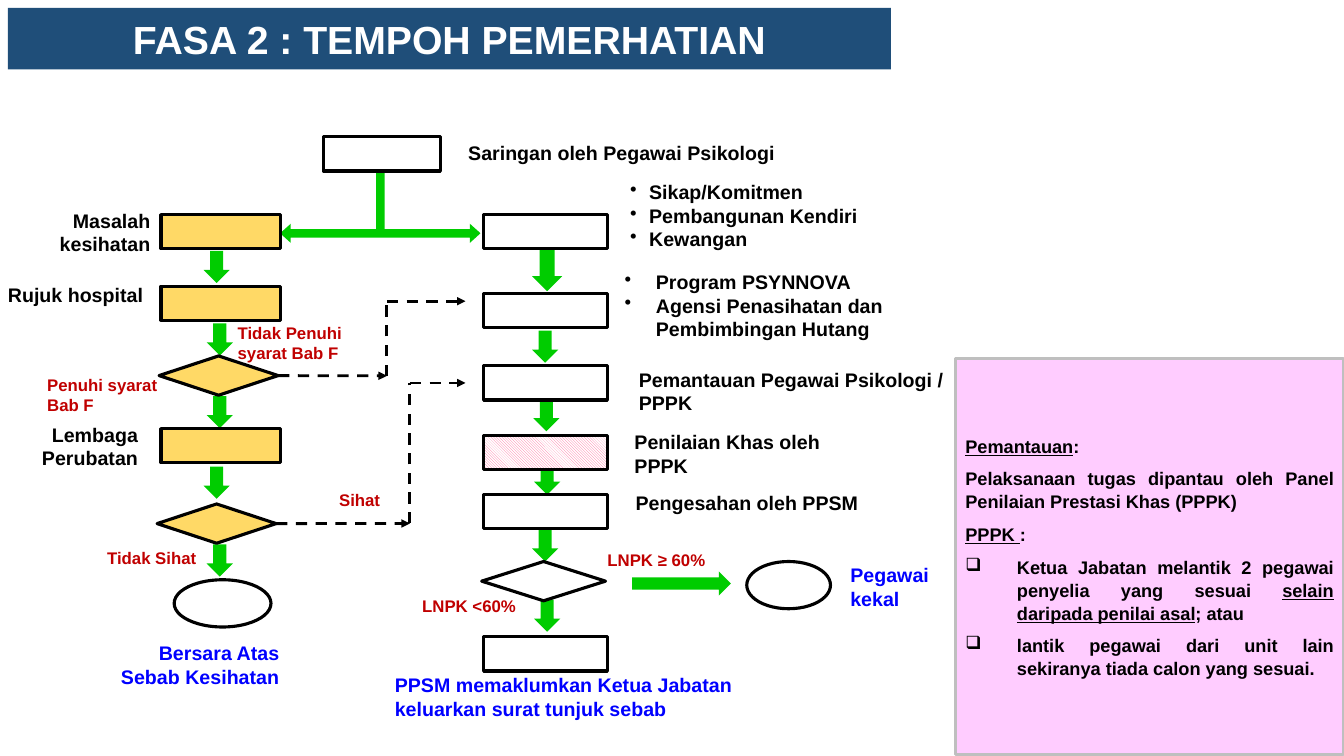
import lxml.etree
import pptx
import pptx.dml.color
import pptx.enum.dml
import pptx.enum.shapes
import pptx.enum.text
import pptx.oxml.ns
import pptx.util

Cm = pptx.util.Cm
Pt = pptx.util.Pt
SHAPE = pptx.enum.shapes.MSO_SHAPE
ALIGN = pptx.enum.text.PP_ALIGN
ANCHOR = pptx.enum.text.MSO_ANCHOR

BLACK, WHITE, BLUE, RED = "000000", "FFFFFF", "0000FF", "C00000"
GREEN, YELLOW = "00CC00", "FFD966"
BOX_HEIGHT = 0.86
HEALTH_WIDTH, REVIEW_WIDTH = 3.0, 3.12
DIAMOND_HEIGHT, OVAL_HEIGHT = 0.99, 1.19
ARROW_SIZE = (0.66, 0.81)

HEALTH_BOXES = [5.41, 7.21, 10.8]
REVIEW_BOXES = [5.41, 7.39, 9.22, 12.47, 16.05]
HEALTH_ARROWS = [(5.13, 6.32), (5.21, 8.15), (5.21, 9.98), (5.13, 11.76), (5.21, 13.72)]
REVIEW_ARROWS = [(13.41, 8.33), (13.44, 10.06), (13.46, 11.66), (13.41, 13.34),
                 (13.46, 15.11)]

# Position, lines, colour, alignment
STEP_LABELS = [
    ((-0.91, 5.13, 4.95, 1.45), ["Masalah kesihatan"], BLACK, ALIGN.RIGHT),
    ((-0.48, 7.01, 4.34, 0.86), ["Rujuk hospital"], BLACK, ALIGN.RIGHT),
    ((0.3, 10.52, 3.43, 1.45), ["Lembaga", "Perubatan"], BLACK, ALIGN.RIGHT),
    ((2.29, 16.03, 5, 1.45), ["Bersara Atas Sebab Kesihatan"], BLUE, ALIGN.RIGHT),
    ((11.3, 3.43, 11.73, 0.86), ["Saringan oleh Pegawai Psikologi"], BLACK, ALIGN.LEFT),
    ((15.6, 9.14, 9.19, 1.45), ["Pemantauan Pegawai Psikologi / PPPK"], BLACK, ALIGN.LEFT),
    ((15.49, 10.72, 6.25, 1.45), ["Penilaian Khas oleh PPPK"], BLACK, ALIGN.LEFT),
    ((15.52, 12.24, 8.08, 0.86), ["Pengesahan oleh PPSM"], BLACK, ALIGN.LEFT),
    ((20.93, 14.07, 3.51, 1.45), ["Pegawai kekal"], BLUE, ALIGN.LEFT),
    ((9.45, 16.84, 10.26, 1.5),
     ["PPSM memaklumkan Ketua Jabatan keluarkan surat tunjuk sebab"], BLUE, ALIGN.LEFT),
]
CONDITION_LABELS = [
    ((-0.03, 13.69, 5.23, 0.76), ["Tidak Sihat"], ALIGN.RIGHT),
    ((7.21, 12.22, 2.62, 0.76), ["Sihat"], ALIGN.RIGHT),
    ((0.94, 9.32, 4.37, 1.27), ["Penuhi syarat", "Bab F"], ALIGN.LEFT),
    ((5.74, 8, 4.39, 1.3), ["Tidak Penuhi syarat Bab F"], ALIGN.LEFT),
    ((15.06, 13.72, 5.31, 0.76), ["LNPK ≥ 60%"], ALIGN.LEFT),
    ((10.39, 14.88, 3.35, 0.76), ["LNPK <60%"], ALIGN.LEFT),
]
# Position, lines, indent, hanging
TOPIC_LISTS = [
    ((15.37, 4.42, 9.45, 2.06),
     ["Sikap/Komitmen", "Pembangunan Kendiri", "Kewangan"], 0.74, 0.48),
    ((15.24, 6.68, 9.6, 2.06),
     ["Program PSYNNOVA", "Agensi Penasihatan dan Pembimbingan Hutang"], 1.04, 0.79),
]
# Bullet, then (text, underlined) runs
MONITORING = [
    (None, [("Pemantauan", True), (":", False)]),
    (None, [("Pelaksanaan tugas dipantau oleh Panel Penilaian Prestasi Khas (PPPK)", False)]),
    (None, [("PPPK ", True), (":", False)]),
    ("❑", [("Ketua Jabatan melantik 2 pegawai penyelia yang sesuai ", False),
           ("selain daripada penilai asal", True), ("; atau", False)]),
    ("❑", [("lantik pegawai dari unit lain sekiranya tiada calon yang sesuai.", False)]),
]


def rgb(code):
    return pptx.dml.color.RGBColor.from_string(code)


def set_values(target, values):
    for name, value in values.items():
        setattr(target, name, value)


def write_paragraph(paragraph, runs, size, colour, align, indent=0, hanging=0, bullet=None):
    """Fill a paragraph with (text, underlined) runs; indents are in centimetres."""
    properties = paragraph._p.get_or_add_pPr()
    properties.set("marL", str(Cm(indent)))
    properties.set("indent", str(-Cm(hanging)))
    if bullet:
        mark = lxml.etree.SubElement(properties, pptx.oxml.ns.qn("a:buChar"))
        mark.set("char", bullet)
    paragraph.alignment = align
    for text, underlined in runs:
        run = paragraph.add_run()
        run.text = text
        set_values(run.font, {"name": "Arial", "size": Pt(size), "bold": True,
                              "underline": underlined})
        run.font.color.rgb = rgb(colour)


def paragraphs_of(frame, count):
    return [frame.paragraphs[0]] + [frame.add_paragraph() for _ in range(count - 1)]


def add_label(slide, position, lines, size, colour, align, **layout):
    frame = slide.shapes.add_textbox(*map(Cm, position)).text_frame
    set_values(frame, {"word_wrap": True,
                       "auto_size": pptx.enum.text.MSO_AUTO_SIZE.SHAPE_TO_FIT_TEXT})
    for paragraph, line in zip(paragraphs_of(frame, len(lines)), lines):
        write_paragraph(paragraph, [(line, False)], size, colour, align, **layout)


def add_figure(slide, kind, position, fill, outline=BLACK, width=2.25):
    figure = slide.shapes.add_shape(kind, *map(Cm, position))
    figure.shadow.inherit = False
    figure.fill.solid()
    figure.fill.fore_color.rgb = rgb(fill)
    if outline:
        figure.line.color.rgb = rgb(outline)
        figure.line.width = Pt(width)
    else:
        figure.line.fill.background()
    return figure


def add_arrow(slide, kind, position):
    return add_figure(slide, kind, position, GREEN, outline=None)


def add_dashed_line(slide, start, end, head=False, origin=None):
    """Draw a dashed line, joined to the right side of origin if given."""
    line = slide.shapes.add_connector(pptx.enum.shapes.MSO_CONNECTOR.STRAIGHT,
                                      *map(Cm, start + end))
    if origin:
        line.begin_connect(origin, 3)
    line.line.color.rgb = rgb(BLACK)
    set_values(line.line, {"width": Pt(2),
                           "dash_style": pptx.enum.dml.MSO_LINE.DASH})
    properties = line._element.spPr
    if head:
        tail = lxml.etree.SubElement(properties.find(pptx.oxml.ns.qn("a:ln")),
                                     pptx.oxml.ns.qn("a:tailEnd"))
        tail.set("type", "triangle")
    lxml.etree.SubElement(properties, pptx.oxml.ns.qn("a:effectLst"))


def add_title(slide):
    banner = add_figure(slide, SHAPE.RECTANGLE, (0.2, 0.2, 22.25, 1.55), "1F4E79", None)
    banner.text_frame.vertical_anchor = ANCHOR.MIDDLE
    write_paragraph(banner.text_frame.paragraphs[0],
                    [("FASA 2 : TEMPOH PEMERHATIAN", False)], 28, WHITE, ALIGN.CENTER)


def add_arrows(slide):
    add_arrow(slide, SHAPE.DOWN_ARROW, (13.41, 6.2, 0.76, 1.14))
    for corner in HEALTH_ARROWS + REVIEW_ARROWS:
        add_arrow(slide, SHAPE.DOWN_ARROW, corner + ARROW_SIZE)
    add_arrow(slide, SHAPE.RIGHT_ARROW, (15.93, 14.4, 2.49, 0.61))
    split = add_arrow(slide, SHAPE.LEFT_RIGHT_UP_ARROW, (7.06, 3.45, 5.05, 2.67))
    for index, share in enumerate([0.08, 0.09, 0.1]):
        split.adjustments[index] = share


def add_steps(slide):
    """Draw both columns of steps and return the two health decisions."""
    add_figure(slide, SHAPE.RECTANGLE, (8.15, 3.45, 2.95, BOX_HEIGHT), WHITE)
    for left, width, tops, fill in [(4.06, HEALTH_WIDTH, HEALTH_BOXES, YELLOW),
                                    (12.19, REVIEW_WIDTH, REVIEW_BOXES, WHITE)]:
        for top in tops:
            add_figure(slide, SHAPE.RECTANGLE, (left, top, width, BOX_HEIGHT), fill)
    assessment = add_figure(slide, SHAPE.RECTANGLE,
                            (12.19, 10.97, REVIEW_WIDTH, BOX_HEIGHT), WHITE)
    assessment.fill.patterned()
    assessment.fill.pattern = pptx.enum.dml.MSO_PATTERN.LIGHT_DOWNWARD_DIAGONAL
    assessment.fill.fore_color.rgb = rgb("FF6699")
    assessment.fill.back_color.rgb = rgb(WHITE)
    add_figure(slide, SHAPE.OVAL, (4.39, 14.61, 2.44, OVAL_HEIGHT), WHITE)
    add_figure(slide, SHAPE.OVAL, (18.82, 14.15, 2.11, OVAL_HEIGHT), WHITE)
    add_figure(slide, SHAPE.DIAMOND, (12.14, 14.15, REVIEW_WIDTH, DIAMOND_HEIGHT), WHITE)
    return [add_figure(slide, SHAPE.DIAMOND, (left, top, HEALTH_WIDTH, DIAMOND_HEIGHT), YELLOW)
            for left, top in [(4.01, 8.97), (3.96, 12.7)]]


def add_detour(slide, decision, start, turn, target_y):
    """Lead from a decision across to the turn, up, then right to the review column."""
    add_dashed_line(slide, start, (turn, start[1]), head=True, origin=decision)
    add_dashed_line(slide, (turn, start[1]), (turn, target_y))
    add_dashed_line(slide, (turn, target_y), (11.73, target_y), head=True)


def add_monitoring_panel(slide):
    panel = add_figure(slide, SHAPE.RECTANGLE, (24.08, 9.04, 9.78, 9.98),
                       "FFCCFF", "BFBFBF", 2)
    frame = panel.text_frame
    frame.vertical_anchor = ANCHOR.MIDDLE
    paragraphs = paragraphs_of(frame, len(MONITORING))
    for index, (paragraph, (bullet, runs)) in enumerate(zip(paragraphs, MONITORING)):
        depth = 1.3 if bullet else 0
        write_paragraph(paragraph, runs, 13, BLACK, ALIGN.JUSTIFY, depth, depth, bullet)
        set_values(paragraph, {"line_spacing": 1.05, "space_before": Pt(7 if index else 0)})


def main():
    deck = pptx.Presentation()
    set_values(deck, {"slide_width": Cm(33.87), "slide_height": Cm(19.05)})
    slide = deck.slides.add_slide(deck.slide_layouts[6])
    add_title(slide)
    add_arrows(slide)
    eligibility, health = add_steps(slide)
    add_detour(slide, eligibility, (7.01, 9.47), 9.75, 7.59)
    add_detour(slide, health, (6.96, 13.19), 10.33, 9.65)
    for position, lines, colour, align in STEP_LABELS:
        add_label(slide, position, lines, 14, colour, align, indent=0.25)
    for position, lines, align in CONDITION_LABELS:
        add_label(slide, position, lines, 12, RED, align)
    for position, lines, indent, hanging in TOPIC_LISTS:
        add_label(slide, position, lines, 14, BLACK, ALIGN.LEFT,
                  indent=indent, hanging=hanging, bullet="•")
    add_monitoring_panel(slide)
    deck.save("out.pptx")


if __name__ == "__main__":
    main()
